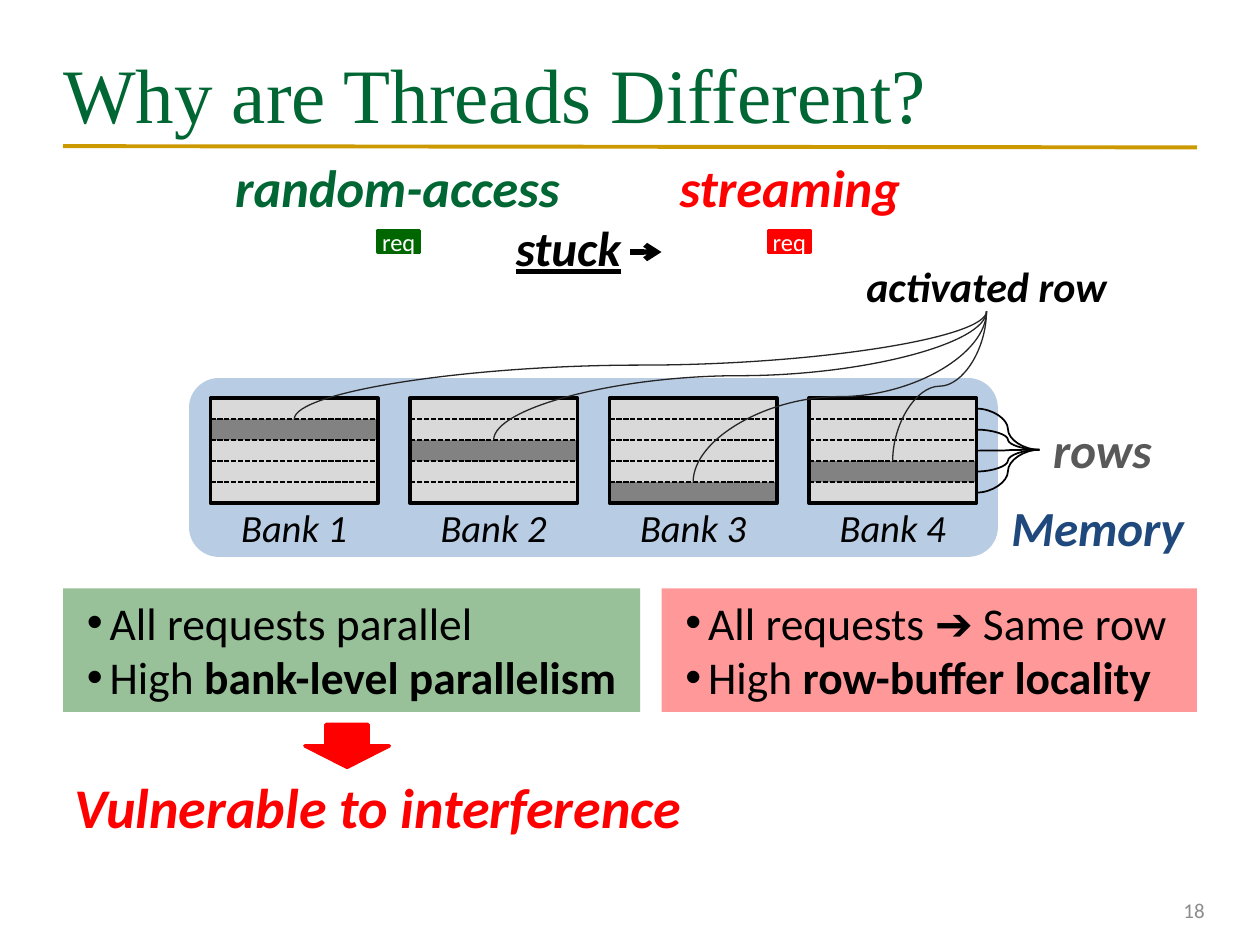
import pptx
import pptx.util
import pptx.dml.color
import pptx.enum.dml
import pptx.enum.shapes
import pptx.enum.text
import pptx.oxml.ns
import lxml.etree

Inches = pptx.util.Inches
Pt = pptx.util.Pt
RGBColor = pptx.dml.color.RGBColor
qn = pptx.oxml.ns.qn
FORM = pptx.enum.shapes.MSO_SHAPE
WIRE = pptx.enum.shapes.MSO_CONNECTOR
ALIGN = pptx.enum.text.PP_ALIGN
ANCHOR = pptx.enum.text.MSO_ANCHOR

BLACK = RGBColor(0x00, 0x00, 0x00)
WHITE = RGBColor(0xFF, 0xFF, 0xFF)
RED = RGBColor(0xFF, 0x00, 0x00)
GREEN = RGBColor(0x00, 0x66, 0x00)
PINE = RGBColor(0x00, 0x66, 0x33)
GOLD = RGBColor(0xCC, 0x99, 0x00)
BLUE = RGBColor(0x4F, 0x81, 0xBD)
NAVY = RGBColor(0x1F, 0x49, 0x7D)
SILVER = RGBColor(0xD9, 0xD9, 0xD9)
GRAY = RGBColor(0x59, 0x59, 0x59)
PALE = RGBColor(0x8C, 0x8C, 0x8C)
COAL = RGBColor(0x26, 0x26, 0x26)

deck = pptx.Presentation()
deck.slide_width = Inches(10)
deck.slide_height = Inches(7.5)
slide = deck.slides.add_slide(deck.slide_layouts[3])
title, left, right = slide.placeholders


def put(text, x, y, w, h, shape=None, form=None, root=slide, fill=None, alpha=None,
        line=None, size=28, color=BLACK, bold=False, slant=False, under=False,
        font="Calibri", align=ALIGN.CENTER, anchor=ANCHOR.TOP, side=0, pad=0,
        space=1, bullet=False):
    box = [Inches(v) for v in (x, y, w, h)]
    if shape:
        shape.left, shape.top, shape.width, shape.height = box
    elif form:
        shape = root.shapes.add_shape(form, *box)
        shape.shadow.inherit = False
    else:
        shape = root.shapes.add_textbox(*box)
    if fill is not None:
        shape.fill.solid()
        shape.fill.fore_color.rgb = fill
    if alpha:
        tint = shape._element.spPr.find(".//" + qn("a:srgbClr"))
        lxml.etree.SubElement(tint, qn("a:alpha")).set("val", str(alpha * 1000))
    if line is not None:
        shape.line.color.rgb = line
        shape.line.width = Pt(2)
    elif form:
        shape.line.fill.background()
    if not text:
        return
    frame = shape.text_frame
    frame.word_wrap = True
    frame.auto_size = pptx.enum.text.MSO_AUTO_SIZE.NONE
    frame.vertical_anchor = anchor
    frame.margin_left = frame.margin_right = Inches(side)
    frame.margin_top = frame.margin_bottom = Inches(pad)
    for i, words in enumerate(text.split("\n")):
        para = frame.add_paragraph() if i else frame.paragraphs[0]
        para.alignment = align
        para.line_spacing = space
        para.space_before = para.space_after = Pt(0)
        if bullet:
            props = para._p.get_or_add_pPr()
            props.set("marL", str(Inches(0.37)))
            props.set("indent", str(Inches(-0.18)))
            lxml.etree.SubElement(props, qn("a:buChar")).set("char", "•")
        for j, part in enumerate(words.split("*")):
            run = para.add_run()
            run.text = part
            run.font.name = font
            run.font.size = Pt(size)
            run.font.color.rgb = color
            run.font.bold = bold or j == 1
            run.font.italic = slant
            run.font.underline = under


def link(x1, y1, x2, y2, kind=WIRE.STRAIGHT, color=BLACK, width=1, root=slide):
    wire = root.shapes.add_connector(kind, *[Inches(v) for v in (x1, y1, x2, y2)])
    wire.line.color.rgb = color
    wire.line.width = Pt(width)
    lxml.etree.SubElement(wire._element.spPr, qn("a:effectLst"))
    return wire


link(0.5, 1.16, 9.5, 1.17, color=GOLD, width=2.25)
put("Why are Threads Different?", 0.5, 0.3, 9, 0.87, shape=title, size=44, color=PINE,
    font="Times New Roman", align=ALIGN.LEFT, anchor=ANCHOR.MIDDLE, pad=0.05)
put("18", 7.33, 7.02, 2.33, 0.4, size=12, color=PALE, align=ALIGN.RIGHT,
    anchor=ANCHOR.MIDDLE, side=0.1, pad=0.05)

put("", 1.5, 3, 6.42, 1.42, form=FORM.ROUNDED_RECTANGLE, fill=BLUE, alpha=40)

wide, step, top, row = 1.33, 4.75 / 3, 3.16, 1 / 6
live = [1, 2, 4, 3]
for i, mark in enumerate(live):
    x = 1.67 + i * step
    bank = slide.shapes.add_group_shape()
    put("", x, top, wide, 5 * row, form=FORM.RECTANGLE, root=bank, fill=SILVER, line=BLACK)
    for j in range(1, 5):
        y = top + j * row
        dash = link(x, y, x + wide, y, root=bank)
        dash.line.dash_style = pptx.enum.dml.MSO_LINE.SQUARE_DOT
    put("", x, top + mark * row, wide, row, form=FORM.RECTANGLE, fill=BLACK, alpha=40)
    put(f"Bank {i + 1}", x, 4, wide, 0.37, size=22, slant=True)

for i in range(5):
    link(7.75, top + (i + 0.5) * row, 8.25, 3.57, kind=WIRE.CURVE)

tip_x, tip_y = 7.83, 2.47
for i, mark in enumerate(live):
    x, y = 1.67 + i * step + wide / 2, top + mark * row
    mid_x, mid_y = (x + tip_x) / 2, (y + tip_y) / 2
    half_w, half_h = (y - tip_y) / 2, (tip_x - x) / 2
    curve = link(mid_x + half_w, mid_y + half_h, mid_x - half_w, mid_y - half_h,
                 kind=WIRE.CURVE, color=COAL, width=0.75)
    curve._element.spPr.find(qn("a:xfrm")).set("rot", str(90 * 60000))

for text, x, y, w, h, size, color, space in [
    ("random-access", 1.83, 1.33, 2.65, 0.42, 30, PINE, 0.8),
    ("streaming", 5.17, 1.33, 2.2, 0.42, 30, RED, 0.8),
    ("activated row", 6.83, 2.07, 2, 0.4, 24, BLACK, 1),
    ("rows", 8.25, 3.33, 1, 0.47, 28, GRAY, 1),
    ("Memory", 8, 3.95, 1.42, 0.47, 28, NAVY, 1),
    ("Vulnerable to interference", 0.5, 6.13, 5, 0.54, 32, RED, 1),
]:
    put(text, x, y, w, h, size=size, color=color, space=space, bold=True, slant=True)
put("stuck", 4.02, 1.73, 0.98, 0.47, bold=True, slant=True, under=True)

for x, color in [(3, GREEN), (6.1, RED)]:
    put("req", x, 1.83, 0.33, 0.17, form=FORM.RECTANGLE, fill=color, line=color,
        size=14, color=WHITE, anchor=ANCHOR.MIDDLE, pad=0.05)

for shape, x, w, color, text in [
    (left, 0.5, 4.58, GREEN, "All requests parallel\nHigh *bank-level parallelism"),
    (right, 5.25, 4.25, RED, "All requests ➔ Same row\nHigh *row-buffer locality"),
]:
    put(text, x, 4.67, w, 0.98, shape=shape, fill=color, alpha=40, size=26,
        align=ALIGN.LEFT, pad=0.05, bullet=True)

put("", 2.42, 5.75, 0.67, 0.34, form=FORM.DOWN_ARROW, fill=RED, line=RED)
arrow = link(5, 2, 5.25, 2, width=3)
lxml.etree.SubElement(arrow.line._get_or_add_ln(), qn("a:tailEnd")).set("type", "arrow")

deck.save("out.pptx")
